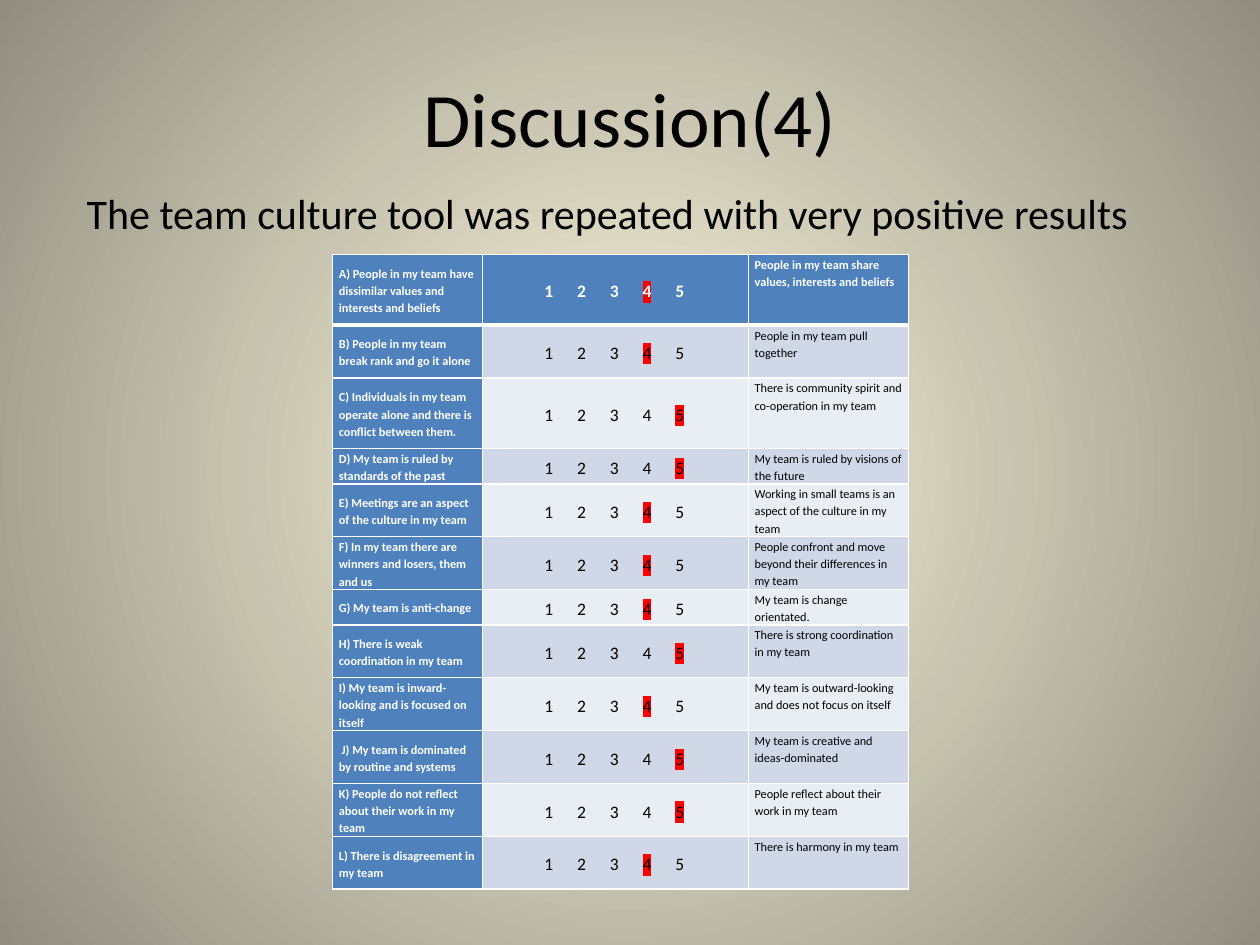
from lxml.etree import SubElement
from pptx import Presentation
from pptx.dml.color import RGBColor
from pptx.enum.text import MSO_ANCHOR, PP_ALIGN
from pptx.oxml.ns import qn
from pptx.util import Inches, Pt

FONT = "Calibri"
BLACK, WHITE, BLUE, RED = "000000", "FFFFFF", "4F81BD", "FF0000"
BANDS = ("E9EDF4", "D0D8E8")
COLUMN_WIDTHS = (1.19, 2.11, 1.27)
SCORE_PITCH = 0.26
CELL_MARGINS = {"margin_left": Inches(0.05), "margin_top": Inches(0.01),
                "margin_right": Inches(0.05), "margin_bottom": 0}

# Negative statement, score, positive statement, row height
STATEMENTS = [
    ("A) People in my team have dissimilar values and interests and beliefs", 4,
     "People in my team share values, interests and beliefs", 0.56),
    ("B) People in my team break rank and go it alone", 4,
     "People in my team pull together", 0.42),
    ("C) Individuals in my team operate alone and there is conflict between them.", 5,
     "There is community spirit and co-operation in my team", 0.56),
    ("D) My team is ruled by standards of the past", 5,
     "My team is ruled by visions of the future", 0.28),
    ("E) Meetings are an aspect of the culture in my team", 4,
     "Working in small teams is an aspect of the culture in my team", 0.42),
    ("F) In my team there are winners and losers, them and us", 4,
     "People confront and move beyond their differences in my team", 0.42),
    ("G) My team is anti-change", 4,
     "My team is change orientated.", 0.28),
    ("H) There is weak coordination in my team", 5,
     "There is strong coordination in my team", 0.42),
    ("I) My team is inward-looking and is focused on itself", 4,
     "My team is outward-looking and does not focus on itself", 0.42),
    (" J) My team is dominated by routine and systems", 5,
     "My team is creative and ideas-dominated", 0.42),
    ("K) People do not reflect about their work in my team", 5,
     "People reflect about their work in my team", 0.42),
    ("L) There is disagreement in my team", 4,
     "There is harmony in my team", 0.42),
]


def color(hex_value):
    return RGBColor.from_string(hex_value)


def apply_format(target, values):
    for name, value in values.items():
        setattr(target, name, value)


def add_run(paragraph, text, size, hex_value, bold=False, highlight=None):
    run = paragraph.add_run()
    run.text = text
    apply_format(run.font, {"name": FONT, "size": Pt(size), "bold": bold})
    run.font.color.rgb = color(hex_value)
    if highlight:
        properties = run.font.fill and run._r.get_or_add_rPr()
        mark = SubElement(properties, qn("a:highlight"))
        SubElement(mark, qn("a:srgbClr"), val=highlight)
        properties.find(qn("a:solidFill")).addnext(mark)


def add_background(slide):
    fill = slide.background.fill
    fill.gradient()
    for stop, (position, hex_value) in zip(
            fill.gradient_stops, ((0, "FCF7DD"), (1, "918E81"))):
        stop.position = position
        stop.color.rgb = color(hex_value)
    # Radial gradient from the slide centre
    gradient = slide.element.find(".//" + qn("a:gradFill"))
    gradient.remove(gradient.find(qn("a:lin")))
    circle = SubElement(gradient, qn("a:path"), {"path": "circle"})
    SubElement(circle, qn("a:fillToRect"), dict.fromkeys("ltrb", "50000"))


def add_text(slide, box, text, size, anchor, align):
    frame = slide.shapes.add_textbox(*map(Inches, box)).text_frame
    apply_format(frame, {"word_wrap": True, "vertical_anchor": anchor})
    paragraph = frame.paragraphs[0]
    paragraph.alignment = align
    add_run(paragraph, text, size, BLACK)


def set_borders(cell, bottom, top):
    properties = cell._tc.get_or_add_tcPr()
    widths = {"a:lnL": 1, "a:lnR": 1, "a:lnT": top, "a:lnB": bottom}
    for index, (tag, width) in enumerate(widths.items()):
        line = SubElement(properties, qn(tag), w=str(Pt(width)))
        SubElement(SubElement(line, qn("a:solidFill")), qn("a:srgbClr"), val=WHITE)
        properties.insert(index, line)


def format_cell(cell, fill, row, anchor):
    cell.fill.solid()
    cell.fill.fore_color.rgb = color(fill)
    apply_format(cell, {**CELL_MARGINS, "vertical_anchor": anchor})
    set_borders(cell, bottom=3 if row == 0 else 1, top=3 if row == 1 else 1)
    paragraph = cell.text_frame.paragraphs[0]
    paragraph.line_spacing = 1.15
    return paragraph


def add_scores(cell, paragraph, score, text_color, bold):
    # Tab stops spread the five scores evenly across the cell
    cell.margin_left = Inches(0.49)
    stops = SubElement(paragraph._p.get_or_add_pPr(), qn("a:tabLst"))
    for step in range(1, 5):
        SubElement(stops, qn("a:tab"), pos=str(Inches(SCORE_PITCH * step)), algn="l")
    for value in range(1, 6):
        if value > 1:
            add_run(paragraph, "\t", 10, text_color, bold)
        add_run(paragraph, str(value), 10, text_color, bold,
                RED if value == score else None)


def add_culture_table(slide, box):
    table = slide.shapes.add_table(
        len(STATEMENTS), len(COLUMN_WIDTHS), *map(Inches, box)).table
    table.horz_banding = False
    for column, width in zip(table.columns, COLUMN_WIDTHS):
        column.width = Inches(width)
    for row, (negative, score, positive, height) in enumerate(STATEMENTS):
        table.rows[row].height = Inches(height)
        first = row == 0
        fill = BLUE if first else BANDS[row % 2]
        text_color = WHITE if first else BLACK
        left, middle, right = (table.cell(row, column) for column in range(3))
        add_run(format_cell(left, BLUE, row, MSO_ANCHOR.MIDDLE), negative, 7, WHITE, True)
        add_scores(middle, format_cell(middle, fill, row, MSO_ANCHOR.MIDDLE),
                   score, text_color, first)
        add_run(format_cell(right, fill, row, MSO_ANCHOR.TOP),
                positive, 7, text_color, first)


def main():
    presentation = Presentation()
    presentation.slide_width, presentation.slide_height = Inches(10), Inches(7.5)
    slide = presentation.slides.add_slide(presentation.slide_layouts[6])
    add_background(slide)
    add_text(slide, (0.5, 0.3, 9, 1.25), "Discussion(4)", 44,
             MSO_ANCHOR.MIDDLE, PP_ALIGN.CENTER)
    add_culture_table(slide, (2.64, 2.02, sum(COLUMN_WIDTHS), 5.03))
    add_text(slide, (0.59, 1.44, 9, 1.06),
             "The team culture tool was repeated with very positive results", 24,
             MSO_ANCHOR.TOP, PP_ALIGN.LEFT)
    presentation.save("out.pptx")


if __name__ == "__main__":
    main()
